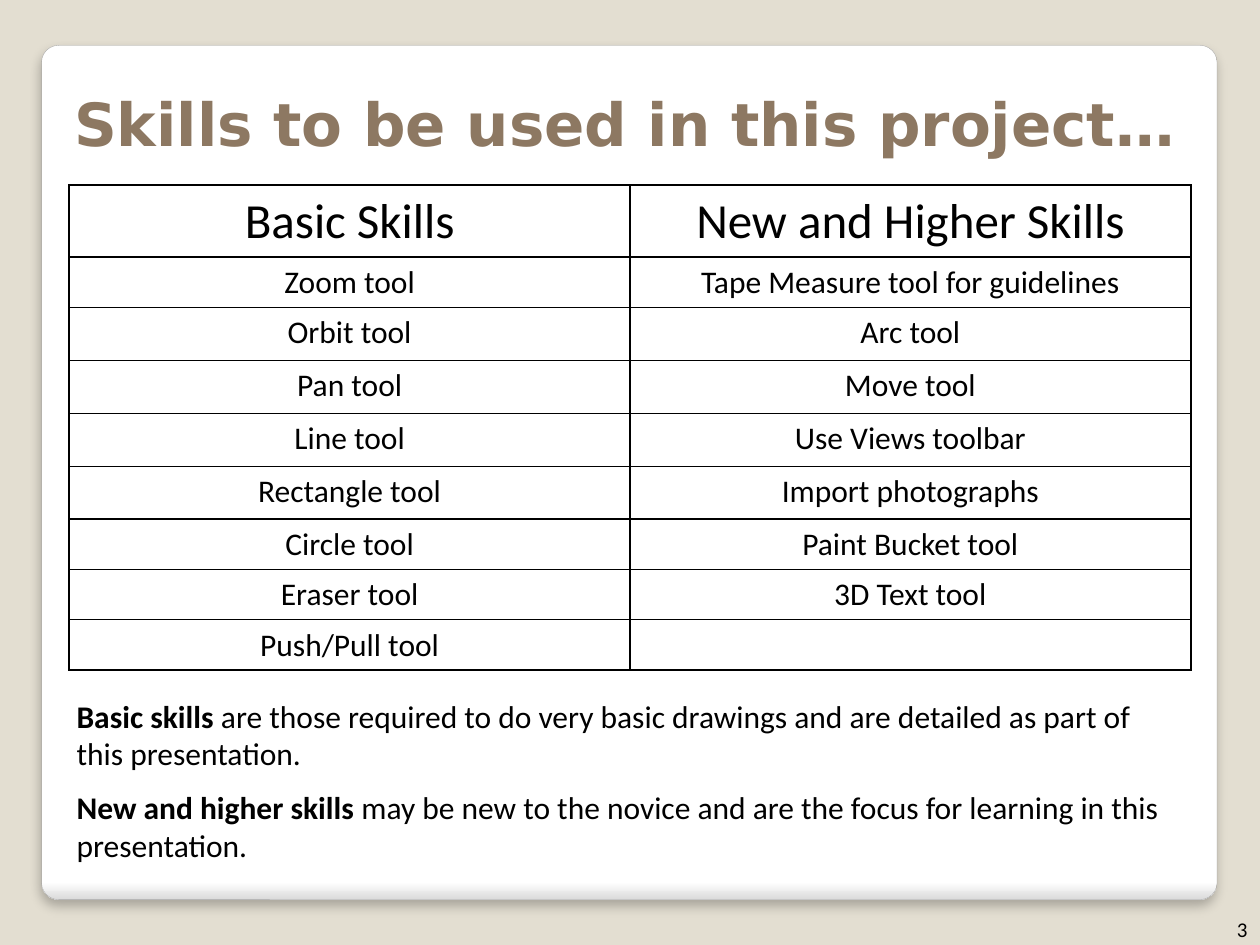
from lxml import etree
from pptx import Presentation
from pptx.dml.color import RGBColor
from pptx.enum import shapes, text
from pptx.oxml import parse_xml
from pptx.oxml.ns import nsdecls, qn
from pptx.util import Inches, Pt

SAND = RGBColor(0xE3, 0xDE, 0xD1)
BROWN = RGBColor(0x8D, 0x78, 0x62)
WHITE = RGBColor(0xFF, 0xFF, 0xFF)
SILVER = RGBColor(0xDA, 0xDA, 0xDA)
GREY = RGBColor(0xA4, 0xA4, 0xA4)
BLACK = RGBColor(0, 0, 0)


def add_run(para, words, size, bold=False, color=BLACK, face="Calibri"):
    run = para.add_run()
    run.text = words
    font = run.font
    font.size, font.bold, font.name = Pt(size), bold, face
    font.color.rgb = color


def add_box(left, top, width, height, anchor):
    box = slide.shapes.add_textbox(
        Inches(left), Inches(top), Inches(width), Inches(height))
    frame = box.text_frame
    frame.word_wrap = True
    frame.vertical_anchor = anchor
    return frame


prs = Presentation()
prs.slide_width, prs.slide_height = Inches(10), Inches(7.5)
slide = prs.slides.add_slide(prs.slide_layouts[6])
back = slide.background.fill
back.solid()
back.fore_color.rgb = SAND

# White card with a soft lower edge and shadow
card = slide.shapes.add_shape(
    shapes.MSO_SHAPE.ROUNDED_RECTANGLE,
    Inches(0.33), Inches(0.36), Inches(9.33), Inches(6.78))
card.adjustments[0] = 0.02
card.fill.gradient()
card.fill.gradient_angle = 270
for stop, pos, color in zip(card.fill.gradient_stops, (0.98, 1), (WHITE, SILVER)):
    stop.position = pos
    stop.color.rgb = color
card.line.color.rgb = GREY
card.line.width = Pt(0.16)
card.shadow.inherit = False
card._element.spPr.find(qn("a:effectLst")).append(parse_xml(
    f'<a:outerShdw {nsdecls("a")} blurRad="{Pt(6)}" dist="{Pt(4)}" dir="5400000">'
    '<a:srgbClr val="000000"><a:alpha val="25000"/></a:srgbClr></a:outerShdw>'))

title = add_box(0.49, 0.44, 9, 0.87, text.MSO_ANCHOR.BOTTOM)
add_run(title.paragraphs[0], "Skills to be used in this project…", 34, True,
        BROWN, "DejaVu Sans")

# Skills table
skills = [
    ("Basic Skills", "New and Higher Skills"),
    ("Zoom tool", "Tape Measure tool for guidelines"),
    ("Orbit tool", "Arc tool"),
    ("Pan tool", "Move tool"),
    ("Line tool", "Use Views toolbar"),
    ("Rectangle tool", "Import photographs"),
    ("Circle tool", "Paint Bucket tool"),
    ("Eraser tool", "3D Text tool"),
    ("Push/Pull tool", ""),
]
tall = [0.57, 0.4, 0.42, 0.42, 0.42, 0.42, 0.4, 0.4, 0.4]
last = len(skills) - 1
table = slide.shapes.add_table(
    len(skills), 2, Inches(0.55), Inches(1.47), Inches(8.9), Inches(3.84)).table
for row, height in zip(table.rows, tall):
    row.height = Inches(height)

for r, pair in enumerate(skills):
    for c, words in enumerate(pair):
        cell = table.cell(r, c)
        para = cell.text_frame.paragraphs[0]
        para.alignment = text.PP_ALIGN.CENTER
        if words:
            add_run(para, words, 18 if r else 28)
        else:
            para.font.size = Pt(18)
        # Heavy lines run round the table and under its header
        heavy = {"lnL": c == 0, "lnR": c == 1, "lnT": r < 2, "lnB": r in (0, last)}
        props = cell._tc.get_or_add_tcPr()
        for side, thick in heavy.items():
            line = etree.SubElement(props, qn(f"a:{side}"),
                                    w=str(Pt(1.5 if thick else 0.75)))
            paint = etree.SubElement(line, qn("a:solidFill"))
            etree.SubElement(paint, qn("a:srgbClr"), val=str(BLACK))
        cell.fill.solid()
        cell.fill.fore_color.rgb = WHITE

# Explanations below the table
notes = [
    ("Basic skills", " are those required to do very basic drawings and are "
     "detailed as part of this presentation."),
    ("New and higher skills", " may be new to the novice and are the focus for "
     "learning in this presentation."),
]
frame = add_box(0.51, 5.48, 8.98, 1.45, text.MSO_ANCHOR.TOP)
for i, (term, rest) in enumerate(notes):
    para = frame.add_paragraph() if i else frame.paragraphs[0]
    if i:
        para.space_before = Pt(9)
    add_run(para, term, 18, True)
    add_run(para, rest, 18)

page = add_box(9.5, 7.12, 0.5, 0.4, text.MSO_ANCHOR.BOTTOM).paragraphs[0]
page.alignment = text.PP_ALIGN.RIGHT
add_run(page, "3", 12)

prs.save("out.pptx")
